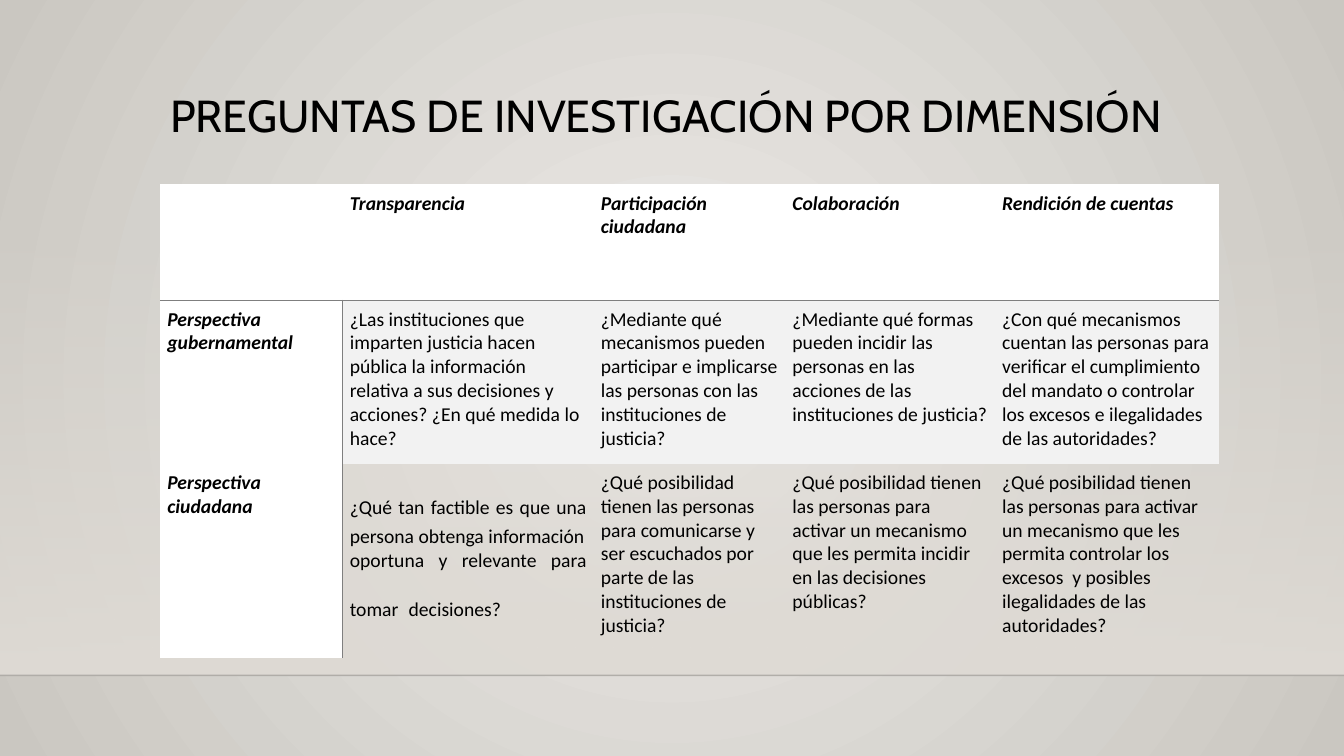
from dataclasses import dataclass

import pptx
import pptx.dml.color
import pptx.enum.shapes
import pptx.enum.text
import pptx.oxml
import pptx.oxml.ns
import pptx.util
from pptx.util import Inches

qn = pptx.oxml.ns.qn
NS = pptx.oxml.ns.nsdecls("a")
ALIGN = pptx.enum.text.PP_ALIGN


@dataclass(frozen=True)
class Theme:
    heading: str = "Cabin"
    body: str = "Calibri"
    title_size: int = 32
    body_size: int = 14
    text: str = "000000"
    glow: str = "ECEAE7"
    edge: str = "CAC7C1"
    floor: str = "DFDBD5"
    rule: str = "7F7F7F"
    header: str = "FFFFFF"
    band: str = "F2F2F2"


THEME = Theme()
COLUMNS = [1.81, 2.49, 1.9, 2.08, 2.22]
ROWS = [1.15, 1.62, 1.93]
# Each paragraph of the justified answer has a wide space between its parts.
FACTIBLE = [
    ("¿Qué tan factible es que una", "persona obtenga información"),
    ("oportuna y relevante para tomar", "decisiones?"),
]
QUESTIONS = [
    ["", "Transparencia", "Participación ciudadana", "Colaboración",
     "Rendición de cuentas"],
    ["Perspectiva gubernamental",
     "¿Las instituciones que imparten justicia hacen pública la información "
     "relativa a sus decisiones y acciones? ¿En qué medida lo hace?",
     "¿Mediante qué mecanismos pueden participar e implicarse las personas "
     "con las instituciones de justicia?",
     "¿Mediante qué formas pueden incidir las personas en las acciones de "
     "las instituciones de justicia?",
     "¿Con qué mecanismos cuentan las personas para verificar el cumplimiento "
     "del mandato o controlar los excesos e ilegalidades de las autoridades?"],
    ["Perspectiva ciudadana",
     FACTIBLE,
     "¿Qué posibilidad tienen las personas para comunicarse y ser escuchados "
     "por parte de las instituciones de justicia?",
     "¿Qué posibilidad tienen las personas para activar un mecanismo que les "
     "permita incidir en las decisiones públicas?",
     "¿Qué posibilidad tienen las personas para activar un mecanismo que les "
     "permita controlar los excesos  y posibles ilegalidades de las "
     "autoridades?"],
]


def rgb(value):
    return pptx.dml.color.RGBColor.from_string(value)


def add_run(p, text, font=THEME.body, size=THEME.body_size, strong=False):
    """Add a run; strong text is bold italic."""
    r = p.add_run()
    r.text = text
    r.font.name = font
    r.font.size = pptx.util.Pt(size)
    r.font.bold = r.font.italic = strong
    r.font.color.rgb = rgb(THEME.text)


def set_gradient(fill, parent, stops, direction):
    """Fill with (position, colour, alpha) stops, all in percent."""
    fill.gradient()
    grad = parent.find(".//" + qn("a:gradFill"))
    for child in list(grad):
        grad.remove(child)
    gs = "".join(
        f'<a:gs pos="{pos * 1000}"><a:srgbClr val="{color}">'
        f'<a:alpha val="{alpha * 1000}"/></a:srgbClr></a:gs>'
        for pos, color, alpha in stops)
    grad.append(pptx.oxml.parse_xml(f"<a:gsLst {NS}>{gs}</a:gsLst>"))
    grad.append(pptx.oxml.parse_xml(direction))


def add_backdrop(s):
    set_gradient(
        s.background.fill, s.element,
        [(0, THEME.glow, 100), (100, THEME.edge, 100)],
        f'<a:path {NS} path="circle"><a:fillToRect l="50000" t="50000" '
        'r="50000" b="50000"/></a:path>')

    sp = s.shapes.add_shape(pptx.enum.shapes.MSO_SHAPE.RECTANGLE, 0,
                            Inches(2.21), Inches(13.33), Inches(4.49))
    sp.shadow.inherit = False
    sp.line.fill.background()
    set_gradient(sp.fill, sp.element,
                 [(0, THEME.floor, 0), (100, THEME.floor, 100)],
                 f'<a:lin {NS} ang="5400000" scaled="0"/>')

    horizon = s.shapes.add_connector(
        pptx.enum.shapes.MSO_CONNECTOR.STRAIGHT,
        0, Inches(6.7), Inches(13.33), Inches(6.7))
    horizon.line.width = pptx.util.Pt(1)
    horizon.line.color.rgb = rgb(THEME.text)
    color = horizon.element.spPr.find(".//" + qn("a:srgbClr"))
    color.append(pptx.oxml.parse_xml(f'<a:alpha {NS} val="20000"/>'))
    horizon.element.spPr.append(pptx.oxml.parse_xml(f"<a:effectLst {NS}/>"))


def add_title(s, text):
    tf = s.shapes.add_textbox(Inches(1.59), Inches(0.88),
                              Inches(10.5), Inches(1.15)).text_frame
    tf.word_wrap = True
    p = tf.paragraphs[0]
    p.line_spacing = 0.9
    add_run(p, text, font=THEME.heading, size=THEME.title_size)


def set_borders(cell, ruled):
    """Rule the named sides (L, R, T, B) and clear the others."""
    for side in "LRTB":
        paint = (f'<a:solidFill><a:srgbClr val="{THEME.rule}"/></a:solidFill>'
                 if side in ruled else "<a:noFill/>")
        cell._tc.get_or_add_tcPr().append(pptx.oxml.parse_xml(
            f'<a:ln{side} {NS} w="12700">{paint}</a:ln{side}>'))


def style_cell(cell, row, col):
    cell.margin_left = cell.margin_right = Inches(0.07)
    cell.margin_top = cell.margin_bottom = Inches(0.07)
    sides = {0: "B", 1: "T"}.get(row, "")
    if row > 0:
        sides += {0: "R", 1: "L"}.get(col, "")
    set_borders(cell, sides)
    if row == 0 or col == 0:
        color = THEME.header
    else:
        color = THEME.band if row == 1 else None
    if color:
        cell.fill.solid()
        cell.fill.fore_color.rgb = rgb(color)
    else:
        cell.fill.background()


def write_cell(cell, content, strong):
    tf = cell.text_frame
    if isinstance(content, str):
        p = tf.paragraphs[0]
        p.space_after = pptx.util.Pt(8)
        if content:
            add_run(p, content, strong=strong)
        return
    for i, (start, end) in enumerate(content):
        p = tf.add_paragraph() if i else tf.paragraphs[0]
        p.alignment = ALIGN.JUSTIFY
        add_run(p, start)
        add_run(p, " ", font=THEME.heading, size=THEME.title_size)
        add_run(p, end)


def add_questions(s):
    table = s.shapes.add_table(
        len(ROWS), len(COLUMNS), Inches(1.59), Inches(1.83),
        Inches(sum(COLUMNS)), Inches(sum(ROWS))).table
    table.first_row = table.horz_banding = False
    for column, width in zip(table.columns, COLUMNS):
        column.width = Inches(width)
    for row, height in zip(table.rows, ROWS):
        row.height = Inches(height)
    for i, contents in enumerate(QUESTIONS):
        for j, content in enumerate(contents):
            cell = table.cell(i, j)
            style_cell(cell, i, j)
            write_cell(cell, content, strong=i == 0 or j == 0)


def main():
    prs = pptx.Presentation()
    prs.slide_width, prs.slide_height = Inches(13.33), Inches(7.5)
    s = prs.slides.add_slide(prs.slide_layouts[6])
    add_backdrop(s)
    add_title(s, "PREGUNTAS DE INVESTIGACIÓN POR DIMENSIÓN")
    add_questions(s)
    prs.save("out.pptx")


if __name__ == "__main__":
    main()
